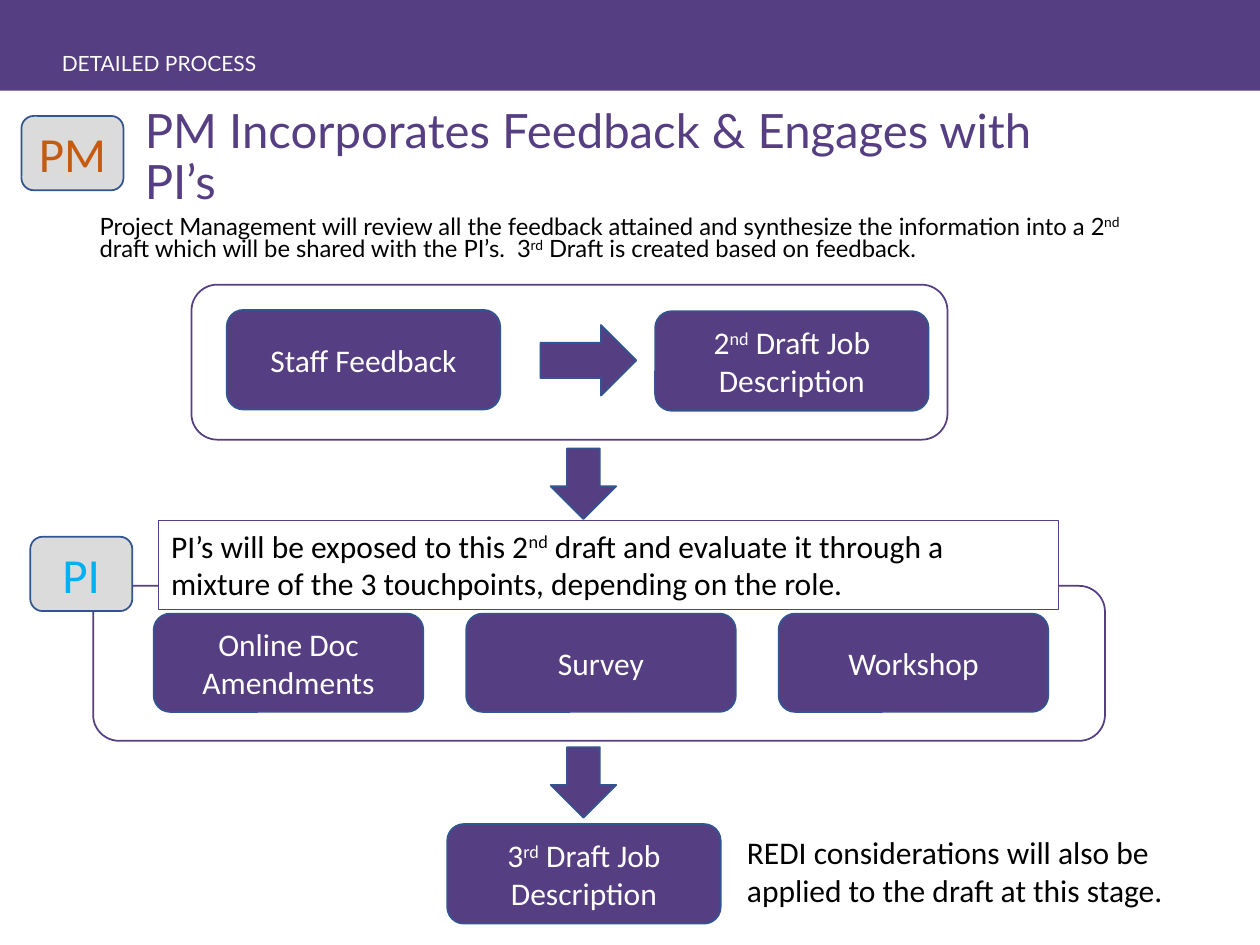
"""Build the slide on how feedback leads to the third draft job description."""
from dataclasses import dataclass

from pptx import Presentation
from pptx.dml.color import RGBColor
from pptx.enum.shapes import MSO_SHAPE as Geometry
from pptx.enum.text import MSO_ANCHOR as Anchor, MSO_AUTO_SIZE as AutoSize, PP_ALIGN as Align
from pptx.oxml.ns import qn
from pptx.util import Inches, Pt

PURPLE, EDGE, GREY = "563E82", "325491", "DBDBDB"
WHITE, BLACK, ORANGE, CYAN = "FFFFFF", "000000", "C55A11", "00B0F0"


@dataclass
class Box:
    left: float
    top: float
    width: float
    height: float
    text: str = ""
    fill: str | None = PURPLE
    line: str | None = EDGE
    color: str = WHITE
    size: float = 18
    geometry: Geometry = Geometry.ROUNDED_RECTANGLE
    rotation: int = 0
    weight: float = 1


def rgb(value: str) -> RGBColor:
    return RGBColor.from_string(value)


def place(target, left: float, top: float, width: float, height: float) -> None:
    target.left, target.top = Inches(left), Inches(top)
    target.width, target.height = Inches(width), Inches(height)


def write(frame, text: str, font: str, size: float, color: str,
          align: Align = Align.LEFT, anchor: Anchor = Anchor.TOP, spacing: float = 1.0) -> None:
    """Write one paragraph in which ^carets^ enclose superscripts."""
    frame.word_wrap = True
    frame.auto_size = AutoSize.NONE
    frame.vertical_anchor = anchor
    paragraph = frame.paragraphs[0]
    paragraph.alignment = align
    paragraph.line_spacing = spacing
    paragraph.space_before = Pt(0)
    for index, part in enumerate(text.split("^")):
        run = paragraph.add_run()
        run.text = part
        run.font.name, run.font.size = font, Pt(size)
        run.font.color.rgb = rgb(color)
        if index % 2:
            run._r.get_or_add_rPr().set("baseline", "30000")


def remove_bullet(paragraph) -> None:
    properties = paragraph._p.get_or_add_pPr()
    properties.set("marL", "0")
    properties.set("indent", "0")
    properties.append(properties.makeelement(qn("a:buNone"), {}))


def draw(shapes, box: Box, align: Align = Align.CENTER, anchor: Anchor = Anchor.MIDDLE):
    shape = shapes.add_shape(box.geometry, Inches(box.left), Inches(box.top),
                             Inches(box.width), Inches(box.height))
    shape.shadow.inherit = False
    shape.rotation = box.rotation
    if box.fill:
        shape.fill.solid()
        shape.fill.fore_color.rgb = rgb(box.fill)
    else:
        shape.fill.background()
    if box.line:
        shape.line.color.rgb = rgb(box.line)
        shape.line.width = Pt(box.weight)
    else:
        shape.line.fill.background()
    if box.text:
        write(shape.text_frame, box.text, "Calibri", box.size, box.color, align, anchor)
    return shape


def step(left: float, top: float, text: str) -> Box:
    return Box(left, top, 2.17, 0.79, text)


def badge(left: float, top: float, text: str, color: str) -> Box:
    return Box(left, top, 0.81, 0.59, text, fill=GREY, color=color, size=28)


def group_frame(left: float, top: float, width: float) -> Box:
    return Box(left, top, width, 1.23, fill=None, line=PURPLE)


def down_arrow(top: float) -> Box:
    return Box(4.35, top, 0.56, 0.52, geometry=Geometry.RIGHT_ARROW, rotation=90)


def main() -> None:
    deck = Presentation()
    deck.slide_width, deck.slide_height = Inches(10), Inches(7.5)
    slide = deck.slides.add_slide(deck.slide_layouts[3])
    shapes = slide.shapes
    title, summary, section = slide.placeholders

    band = draw(shapes, Box(-0.01, -0.02, 10.02, 0.74, line=None, geometry=Geometry.RECTANGLE))
    shapes._spTree.insert(2, band._element)

    place(title, 1.05, 0.84, 7.71, 0.84)
    write(title.text_frame, "PM Incorporates Feedback & Engages with PI’s", "Lato", 27, PURPLE,
          anchor=Anchor.MIDDLE, spacing=0.9)
    for holder in (summary, section):
        remove_bullet(holder.text_frame.paragraphs[0])
    place(summary, 0.69, 1.67, 8.62, 0.5)
    write(summary.text_frame,
          "Project Management will review all the feedback attained and synthesize the information "
          "into a 2^nd^ draft which will be shared with the PI’s.  3^rd^ Draft is created based on "
          "feedback.", "Lato", 13.6, BLACK, spacing=0.8)
    place(section, 0.39, 0.37, 2.07, 0.32)
    write(section.text_frame, "DETAILED PROCESS", "Lato", 12, WHITE, spacing=0.9)

    touchpoints = ("Online Doc Amendments", "Survey", "Workshop")
    flow = [
        badge(0.17, 0.92, "PM", ORANGE),
        down_arrow(3.58),
        step(1.8, 2.46, "Staff Feedback"),
        step(5.2, 2.47, "2^nd^ Draft Job Description"),
        group_frame(1.52, 2.26, 6),
        Box(4.29, 2.58, 0.76, 0.56, geometry=Geometry.RIGHT_ARROW),
        *(Box(1.22 + 2.48 * column, 4.87, 2.14, 0.78, name)
          for column, name in enumerate(touchpoints)),
        group_frame(0.74, 4.65, 8.03),
        badge(0.24, 4.26, "PI", CYAN),
        down_arrow(5.95),
        step(3.55, 6.54, "3^rd^ Draft Job Description"),
    ]
    for box in flow:
        draw(shapes, box)

    evaluation = Box(1.26, 4.13, 7.14, 0.71,
                     "PI’s will be exposed to this 2^nd^ draft and evaluate it through a mixture of "
                     "the 3 touchpoints, depending on the role.",
                     fill=WHITE, line=PURPLE, color=BLACK,
                     geometry=Geometry.RECTANGLE, weight=0.75)
    draw(shapes, evaluation, Align.LEFT, Anchor.TOP)

    considerations = shapes.add_textbox(Inches(5.83), Inches(6.56), Inches(3.64), Inches(0.71))
    write(considerations.text_frame,
          "REDI considerations will also be applied to the draft at this stage.",
          "Calibri", 18, BLACK)
    deck.save("out.pptx")


if __name__ == "__main__":
    main()
